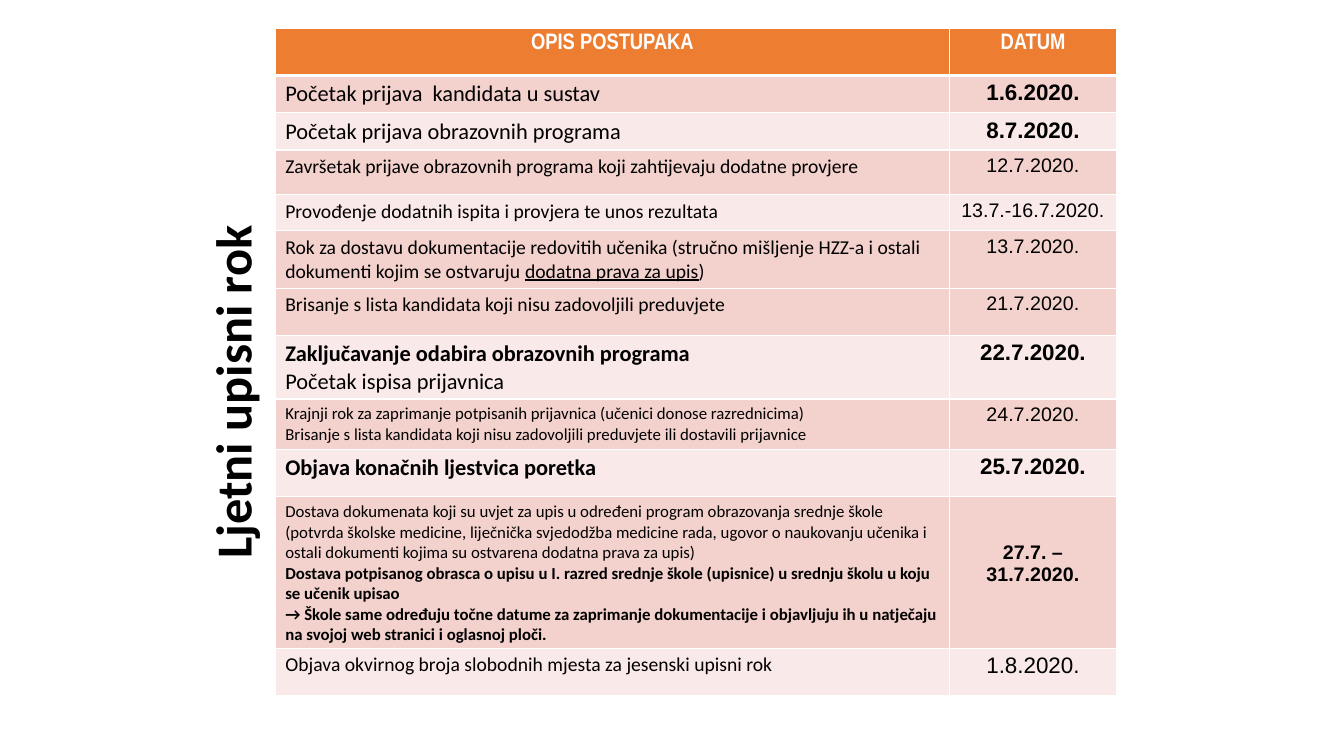
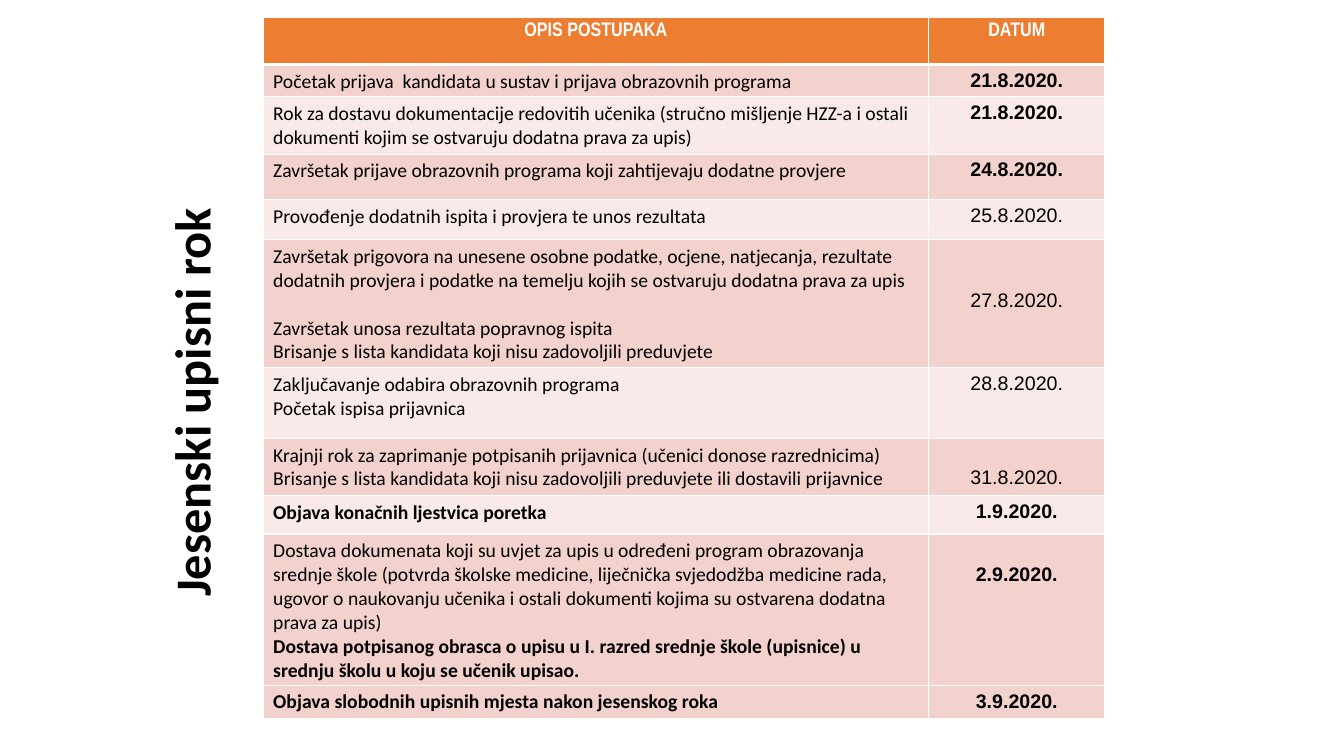
"""Builds two enrolment calendars: a rotated title beside a table of steps and dates."""
from dataclasses import dataclass
from lxml import etree
from pptx import Presentation
from pptx import util as u
from pptx.dml.color import RGBColor
from pptx.enum import text
from pptx.oxml.ns import qn


@dataclass(frozen=True)
class Theme:
    """Colours, fonts, sizes and line widths shared by the slides."""
    header: str = "ED7D31"
    dark: str = "F3D1CD"
    light: str = "F9E9E8"
    white: str = "FFFFFF"
    black: str = "000000"
    body_font: str = "Calibri"
    date_font: str = "Arial"
    head_font: str = "Arial Narrow"
    title_size: int = 36
    large: int = 16
    normal: int = 14
    small: int = 12
    gap: int = 17
    thin: int = 1
    thick: int = 3
    pad_top: float = 0.05
    pad_bottom: float = 0.03
    pad_side: float = 0.1


T = Theme()
HEADINGS = ("OPIS POSTUPAKA", "DATUM")
DOCUMENTS = ("Dostava dokumenata koji su uvjet za upis u određeni program obrazovanja srednje škole "
             "(potvrda školske medicine, liječnička svjedodžba medicine rada, ugovor o naukovanju učenika "
             "i ostali dokumenti kojima su ostvarena dodatna prava za upis)")
FORM = ("*Dostava potpisanog obrasca o upisu u I. razred srednje škole (upisnice) "
        "u srednju školu u koju se učenik upisao")
REGULAR = ("Rok za dostavu dokumentacije redovitih učenika (stručno mišljenje HZZ-a i ostali "
           "dokumenti kojim se ostvaruju ")
EXTRA = "Završetak prijave obrazovnih programa koji zahtijevaju dodatne provjere"
EXAMS = "Provođenje dodatnih ispita i provjera te unos rezultata"
REMOVAL = "Brisanje s lista kandidata koji nisu zadovoljili preduvjete"
LOCK = "Zaključavanje odabira obrazovnih programa"
PRINT = "Početak ispisa prijavnica"
SIGNED = ["Krajnji rok za zaprimanje potpisanih prijavnica (učenici donose razrednicima)",
          REMOVAL + " ili dostavili prijavnice"]
RESULTS = "*Objava konačnih ljestvica poretka"

SLIDES = [
    dict(title="Ljetni upisni rok", title_at=(0.01, 3.01, 4.57, 0.7), table_at=(2.73, 0.28),
         cols=(6.69, 1.65), head_size=T.large, shades="DLDLDDLDLDL", rows=[
        (0.37, ["Početak prijava  kandidata u sustav"], "*1.6.2020.", dict(size=T.large)),
        (0.37, ["Početak prijava obrazovnih programa"], "*8.7.2020.", dict(size=T.large)),
        (0.44, [EXTRA], "12.7.2020.", {}),
        (0.36, [EXAMS], "13.7.-16.7.2020.", {}),
        (0.57, [REGULAR + "_dodatna prava za upis_)"], "13.7.2020.", {}),
        (0.47, [REMOVAL], "21.7.2020.", {}),
        (0.63, ["*" + LOCK, PRINT], "*22.7.2020.", dict(size=T.large)),
        (0.5, SIGNED, "24.7.2020.", dict(size=T.small, date_size=T.normal)),
        (0.47, [RESULTS], "*25.7.2020.", dict(size=T.large)),
        (1.5, [DOCUMENTS, FORM,
               "*→ Škole same određuju točne datume za zaprimanje dokumentacije i objavljuju ih "
               "u natječaju na svojoj web stranici i oglasnoj ploči."],
         "*27.7. – 31.7.2020.", dict(size=T.small, date_size=T.normal, date_top=0.45)),
        (0.47, ["Objava okvirnog broja slobodnih mjesta za jesenski upisni rok"],
         "1.8.2020.", dict(date_size=T.large)),
    ]),
    dict(title="Jesenski upisni rok", title_at=(-0.55, 3.22, 4.89, 0.71), table_at=(2.61, 0.17),
         cols=(6.6, 1.75), head_size=T.normal, shades="DLDLDLDLDD", rows=[
        (0.32, ["Početak prijava  kandidata u sustav i prijava obrazovnih programa"], "*21.8.2020.", {}),
        (0.57, [REGULAR + "dodatna prava za upis)"], "*21.8.2020.", {}),
        (0.45, [EXTRA], "*24.8.2020.", {}),
        (0.4, [EXAMS], "25.8.2020.", {}),
        (1.27, ["Završetak prigovora na unesene osobne podatke, ocjene, natjecanja, rezultate dodatnih "
                "provjera i podatke na temelju kojih se ostvaruju dodatna prava za upis",
                "Završetak unosa rezultata popravnog ispita", REMOVAL],
         "27.8.2020.", dict(date_top=0.49, gap_before=1)),
        (0.7, [LOCK, PRINT], "28.8.2020.", {}),
        (0.57, SIGNED, "31.8.2020.", dict(date_top=0.28)),
        (0.38, [RESULTS], "*1.9.2020.", {}),
        (1.5, [DOCUMENTS, FORM + "."], "*2.9.2020.", dict(date_top=0.29)),
        (0.33, ["*Objava slobodnih upisnih mjesta nakon jesenskog roka"], "*3.9.2020.", {}),
    ]),
]


def write(tf, lines, font, size, color=T.black, align=text.PP_ALIGN.LEFT, gap_before=None):
    """Writes lines; a leading * means bold and _..._ means underlined."""
    for i, line in enumerate(lines):
        p = tf.paragraphs[0] if i == 0 else tf.add_paragraph()
        p.alignment, p.line_spacing = align, 1.0
        p.space_before = u.Pt(T.gap if i == gap_before else 0)
        for j, part in enumerate(line.lstrip("*").split("_")):
            r = p.add_run()
            r.text = part
            look = dict(name=font, size=u.Pt(size), bold=line.startswith("*"), underline=j % 2 == 1)
            for key, value in look.items():
                setattr(r.font, key, value)
            r.font.color.rgb = RGBColor.from_string(color)


def style_cell(cell, fill, widths, top=T.pad_top):
    """Sets the fill, margins and the left, right, top and bottom borders."""
    cell.fill.solid()
    cell.fill.fore_color.rgb = RGBColor.from_string(fill)
    margins = dict(margin_top=top, margin_bottom=T.pad_bottom,
                   margin_left=T.pad_side, margin_right=T.pad_side)
    for key, value in margins.items():
        setattr(cell, key, u.Inches(value))
    tcPr = cell._tc.get_or_add_tcPr()
    for i, (side, width) in enumerate(zip("LRTB", widths)):
        ln = etree.Element(qn(f"a:ln{side}"), w=str(u.Pt(width)))
        solid = etree.SubElement(ln, qn("a:solidFill"))
        etree.SubElement(solid, qn("a:srgbClr"), val=T.white)
        tcPr.insert(i, ln)


def add_title(s, title, at):
    """Turns the title placeholder to read upwards."""
    sp = s.shapes.title
    sp.left, sp.top, sp.width, sp.height = map(u.Inches, at)
    sp.rotation = 270
    tf = sp.text_frame
    frame = dict(word_wrap=True, auto_size=text.MSO_AUTO_SIZE.NONE, vertical_anchor=text.MSO_ANCHOR.TOP)
    for key, value in frame.items():
        setattr(tf, key, value)
    write(tf, ["*" + title], T.body_font, T.title_size)


def add_calendar(s, data):
    """Adds the table of steps and dates."""
    heights = [0.47] + [row[0] for row in data["rows"]]
    area = (*data["table_at"], sum(data["cols"]), sum(heights))
    table = s.shapes.add_table(len(heights), len(data["cols"]), *map(u.Inches, area)).table
    table.horz_banding = False
    for col, width in zip(table.columns, data["cols"]):
        col.width = u.Inches(width)
    for row, height in zip(table.rows, heights):
        row.height = u.Inches(height)
    for c, heading in enumerate(HEADINGS):
        cell = table.cell(0, c)
        style_cell(cell, T.header, (T.thin, T.thin, T.thin, T.thick))
        write(cell.text_frame, ["*" + heading], T.head_font, data["head_size"], T.white,
              text.PP_ALIGN.CENTER)
    fills = dict(D=T.dark, L=T.light)
    for n, ((_, lines, date, opt), shade) in enumerate(zip(data["rows"], data["shades"]), 1):
        size = opt.get("size", T.normal)
        widths = (T.thin, T.thin, T.thick if n == 1 else T.thin, T.thin)
        step, day = table.cell(n, 0), table.cell(n, 1)
        style_cell(step, fills[shade], widths)
        style_cell(day, fills[shade], widths, opt.get("date_top", T.pad_top))
        write(step.text_frame, lines, T.body_font, size, gap_before=opt.get("gap_before"))
        write(day.text_frame, [date], T.date_font, opt.get("date_size", size),
              align=text.PP_ALIGN.CENTER)


def main():
    """Builds and saves the presentation."""
    prs = Presentation()
    prs.slide_width, prs.slide_height = u.Inches(13.33), u.Inches(7.5)
    for data in SLIDES:
        s = prs.slides.add_slide(prs.slide_layouts[5])
        add_title(s, data["title"], data["title_at"])
        add_calendar(s, data)
    prs.save("out.pptx")


if __name__ == "__main__":
    main()
